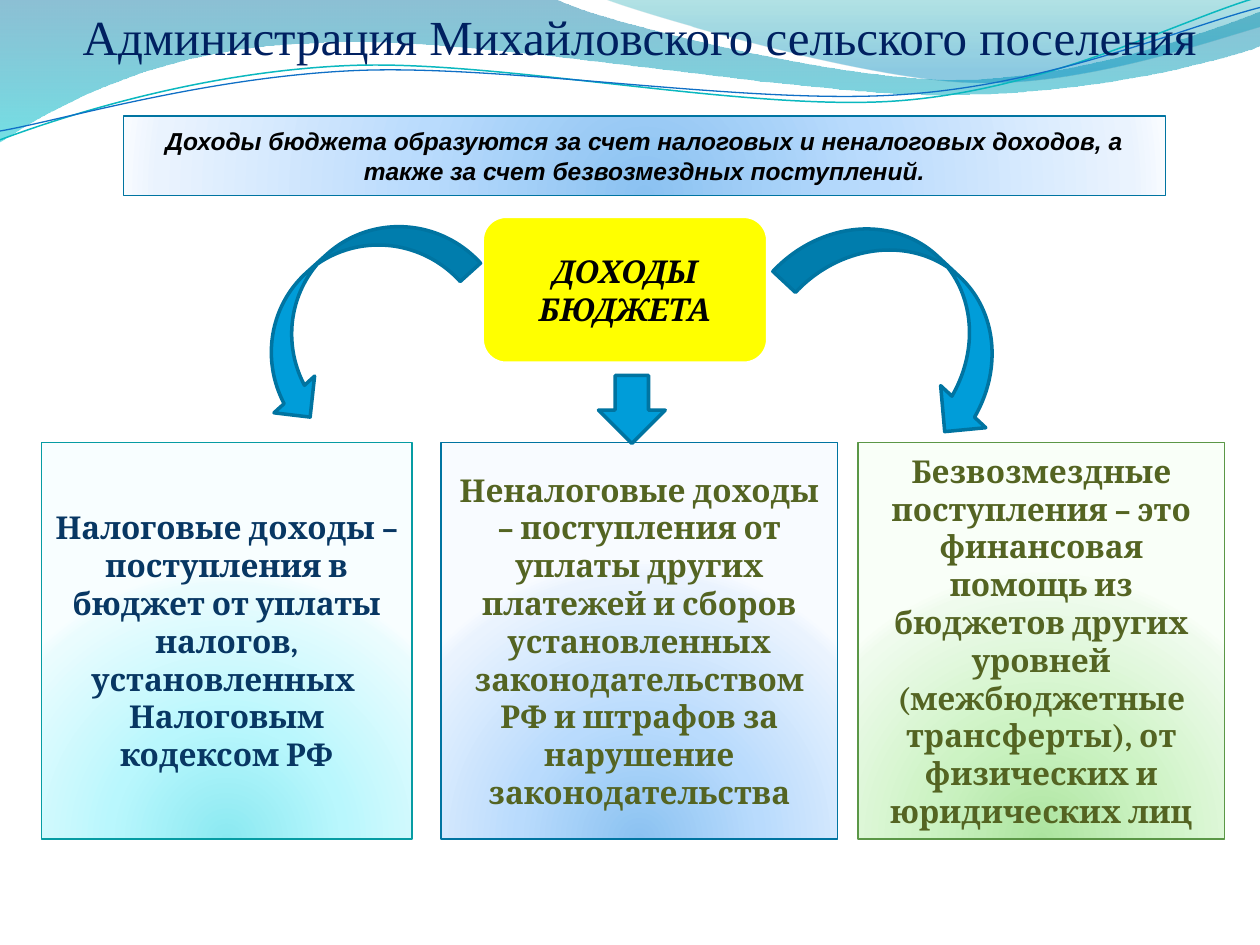
import math

from lxml import etree
from pptx import Presentation
from pptx.dml.color import RGBColor
from pptx.enum.shapes import MSO_SHAPE
from pptx.enum.text import MSO_ANCHOR, MSO_AUTO_SIZE, PP_ALIGN
from pptx.oxml.ns import qn
from pptx.util import Inches, Pt

RECTANGLE = MSO_SHAPE.RECTANGLE
ROUNDED = MSO_SHAPE.ROUNDED_RECTANGLE
DOWN_ARROW = MSO_SHAPE.DOWN_ARROW
RIGHT_CURVE = MSO_SHAPE.CURVED_RIGHT_ARROW
LEFT_CURVE = MSO_SHAPE.CURVED_LEFT_ARROW
CENTER = PP_ALIGN.CENTER
TOP, MIDDLE = MSO_ANCHOR.TOP, MSO_ANCHOR.MIDDLE
GROW = MSO_AUTO_SIZE.SHAPE_TO_FIT_TEXT

GLOW_POSITIONS = (0, 43, 93, 100)
BLUE_GLOW = ("8BC2F1", "B9DBFD", "EAF3FE", "F8FBFF")
TEAL_GLOW = ("8BE9F1", "B9F7FD", "EAFCFE", "F8FEFF")
GREEN_GLOW = ("ACE49F", "CDF3C4", "EFFBED", "F9FFF8")
DARK_BLUE = "0074A1"
WAVE_TILT = 357.3

# Filled waves: start, then line ends (1 point) or curves (3 points);
# gradient stops are (position, colour, opacity)
WAVE_BANDS = [
    ((0, 0),
     [[(4.4, -0.01)], [(4.76, 0.17), (6.64, 0.63), (7.58, 0.63)],
      [(8.53, 0.63), (9.58, 0.26), (10, 0.09)], [(10.01, 0.36)],
      [(9.83, 0.44), (8.7, 0.76), (7.46, 0.75)],
      [(6.22, 0.75), (3.82, 0.28), (2.57, 0.34)],
      [(1.29, 0.36), (0.46, 0.83), (-0.01, 1.13)], [(0, 0)]],
     [(0, "0074A1", 45), (100, "00C6CF", 55)]),
    ((4.79, -0.01),
     [[(5.09, 0.11), (6.82, 0.62), (7.69, 0.65)],
      [(8.56, 0.69), (9.61, 0.32), (10, 0.21)], [(10, 0)], [(4.79, -0.01)]],
     [(0, "00A1A9", 30), (80, "008BBF", 45)]),
]
# Wave lines: start, curves, centre of tilt, colour, width
WAVE_LINES = [
    ((0, 1.11),
     [[(0.48, 0.93), (1.58, 0.57), (2.77, 0.52)],
      [(3.95, 0.47), (5.93, 0.89), (7.13, 0.8)],
      [(8.33, 0.71), (9.38, 0.15), (9.98, -0.02)]], (4.99, 0.58), "0AB8BF", 0.85),
    ((0, 1.04),
     [[(0.47, 0.96), (1.64, 0.61), (2.83, 0.56)],
      [(4.03, 0.51), (5.97, 0.84), (7.17, 0.75)],
      [(8.36, 0.67), (9.41, 0.21), (10, 0.06)]], (5, 0.59), "0F6FC6", 0.75),
]

# Income kinds: left, width, glow, line colour, text colour, text
INCOME_KINDS = [
    (3.5, 3.15, BLUE_GLOW, DARK_BLUE, "546422",
     "Неналоговые доходы – поступления от уплаты других платежей и сборов "
     "установленных законодательством РФ и штрафов за нарушение законодательства"),
    (0.33, 2.94, TEAL_GLOW, "069CA3", "083763",
     "Налоговые доходы – поступления в бюджет от уплаты налогов, "
     "установленных  Налоговым кодексом РФ"),
    (6.81, 2.91, GREEN_GLOW, "5B9747", "546422",
     "Безвозмездные поступления – это финансовая помощь из бюджетов других "
     "уровней (межбюджетные трансферты), от физических и юридических лиц"),
]
# Arrows: shape, frame, rotation
ARROWS = [
    (RIGHT_CURVE, (2.33, 1.43, 0.87, 2.04), 47.9),
    (DOWN_ARROW, (4.75, 2.98, 0.53, 0.54), 0),
    (LEFT_CURVE, (6.75, 1.46, 0.98, 2.11), 313),
]


def color(value):
    return RGBColor.from_string(value)


def set_gradient(shape, stops, radial=False):
    shape.fill.background()
    gradient = etree.Element(qn("a:gradFill"), rotWithShape="1")
    stop_list = etree.SubElement(gradient, qn("a:gsLst"))
    for position, value, opacity in stops:
        stop = etree.SubElement(stop_list, qn("a:gs"), pos=str(position * 1000))
        node = etree.SubElement(stop, qn("a:srgbClr"), val=value)
        if opacity < 100:
            etree.SubElement(node, qn("a:alpha"), val=str(opacity * 1000))
    if radial:
        center = etree.SubElement(gradient, qn("a:path"), path="circle")
        etree.SubElement(center, qn("a:fillToRect"),
                         l="50000", t="130000", r="50000", b="-30000")
    else:
        etree.SubElement(gradient, qn("a:lin"), ang="5400000", scaled="1")
    properties = shape.element.spPr
    properties.replace(properties.find(qn("a:noFill")), gradient)


def set_glow(shape, glow):
    set_gradient(shape, [(position, value, 100) for position, value
                         in zip(GLOW_POSITIONS, glow)], radial=True)


def set_fill(shape, value):
    shape.fill.solid()
    shape.fill.fore_color.rgb = color(value)


def set_line(shape, value, width):
    shape.line.color.rgb = color(value)
    shape.line.width = Pt(width)


def turn(point, center, degrees):
    angle = math.radians(degrees)
    x, y = point[0] - center[0], point[1] - center[1]
    return (center[0] + x * math.cos(angle) - y * math.sin(angle),
            center[1] + x * math.sin(angle) + y * math.cos(angle))


def add_wave(shapes, start, segments, closed):
    """Build an outline, then make each three-point segment a cubic curve."""
    points = [start] + [point for segment in segments for point in segment]
    corners = [(Inches(x), Inches(y)) for x, y in points]
    builder = shapes.build_freeform(*corners[0])
    builder.add_line_segments(corners[1:], close=closed)
    wave = builder.convert_to_shape()
    wave.shadow.inherit = False
    outline = next(wave.element.spPr.iter(qn("a:path")))
    steps = iter(outline.findall(qn("a:lnTo")))
    for segment in segments:
        nodes = [next(steps) for _ in segment]
        if len(nodes) == 3:
            curve = etree.Element(qn("a:cubicBezTo"))
            nodes[0].addprevious(curve)
            for node in nodes:
                curve.append(node[0])
                outline.remove(node)
    return wave


def add_box(slide, kind, frame, line_color, line_width):
    box = slide.shapes.add_shape(kind, *map(Inches, frame))
    box.shadow.inherit = False
    set_line(box, line_color, line_width)
    return box


def write_text(box, text, text_color, anchor=MIDDLE, **formats):
    frame = box.text_frame
    frame.word_wrap = True
    frame.vertical_anchor = anchor
    para = frame.paragraphs[0]
    para.alignment = CENTER
    span = para.add_run()
    span.text = text
    span.font.color.rgb = color(text_color)
    for name, value in formats.items():
        setattr(span.font, name, value)


def main():
    deck = Presentation()
    deck.slide_width, deck.slide_height = Inches(10), Inches(7.5)
    slide = deck.slides.add_slide(deck.slide_layouts[6])
    cambria = {"name": "Cambria", "size": Pt(18), "bold": True}

    # Wave decoration
    for start, segments, stops in WAVE_BANDS:
        band = add_wave(slide.shapes, start, segments, closed=True)
        set_gradient(band, stops)
        band.line.fill.background()
    wave_lines = slide.shapes.add_group_shape()
    for start, segments, center, value, width in WAVE_LINES:
        level = [[turn(point, center, -WAVE_TILT) for point in segment]
                 for segment in segments]
        wave = add_wave(wave_lines.shapes, turn(start, center, -WAVE_TILT),
                        level, closed=False)
        wave.rotation = WAVE_TILT
        wave.fill.background()
        set_line(wave, value, width)

    # Introduction
    intro = add_box(slide, RECTANGLE, (0.98, 0.92, 8.27, 0.63), DARK_BLUE, 0.75)
    set_glow(intro, BLUE_GLOW)
    write_text(intro, "Доходы бюджета образуются за счет налоговых и неналоговых "
               "доходов, а также за счет безвозмездных поступлений.", "000000",
               name="Arial", size=Pt(14), bold=True, italic=True)

    # Income kinds and their common heading
    for left, width, glow, line_color, text_color, text in INCOME_KINDS:
        box = add_box(slide, RECTANGLE, (left, 3.51, width, 3.15), line_color, 0.75)
        set_glow(box, glow)
        write_text(box, text, text_color, **cambria)
    heading = add_box(slide, ROUNDED, (3.82, 1.71, 2.28, 1.18), "FFFFFF", 3)
    set_fill(heading, "FFFF00")
    write_text(heading, "ДОХОДЫ БЮДЖЕТА", "000000", italic=True, **cambria)

    # Arrows
    for kind, frame, rotation in ARROWS:
        arrow = add_box(slide, kind, frame, DARK_BLUE, 2)
        set_fill(arrow, "009DD9")
        arrow.rotation = rotation

    # Title
    title = slide.shapes.add_textbox(*map(Inches, (0.15, 0, 9.85, 0.57)))
    write_text(title, "Администрация Михайловского сельского поселения", "002060",
               anchor=TOP, name="Times New Roman", size=Pt(28))
    title.text_frame.auto_size = GROW

    deck.save("out.pptx")


if __name__ == "__main__":
    main()
